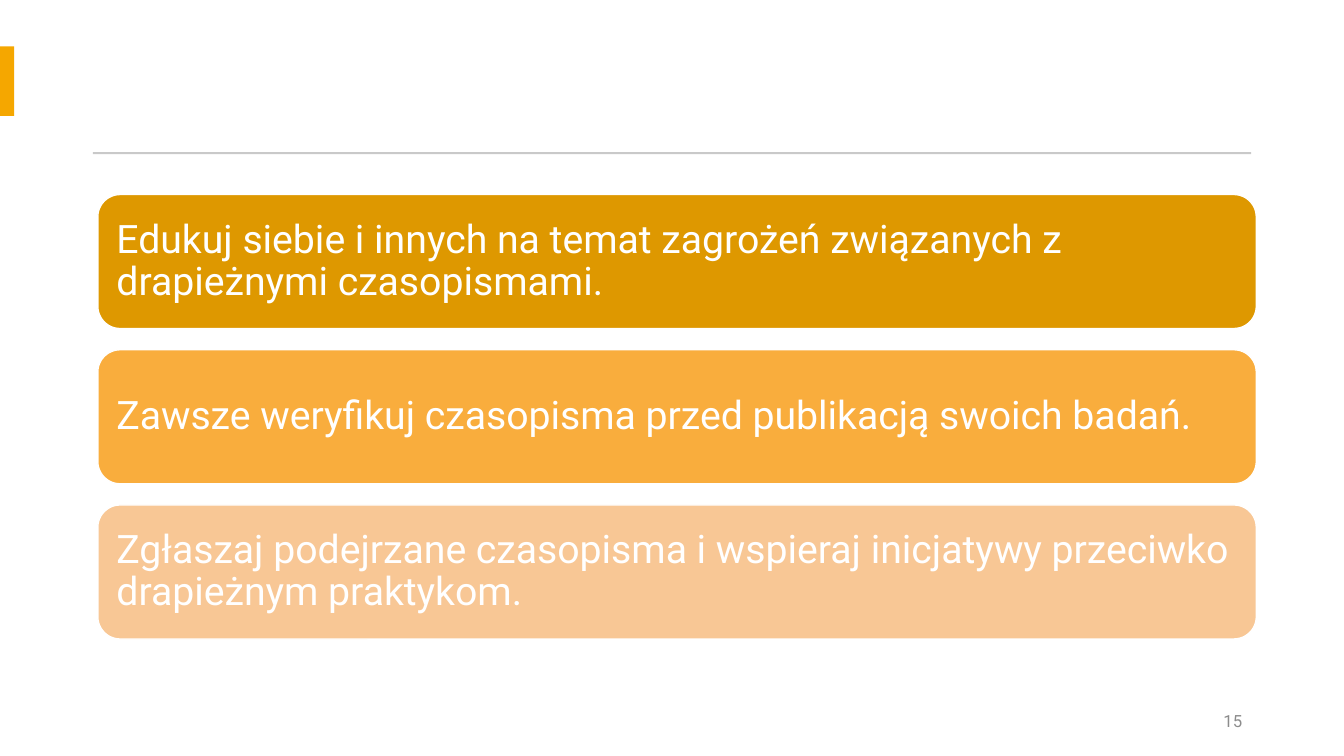
"""Build a slide with three recommendations about predatory journals."""
import dataclasses

import pptx
import pptx.dml.color
import pptx.enum.shapes
import pptx.enum.text
import pptx.util

PX = 9144
FONT = "Roboto"
WHITE = "FFFFFF"
Shape = pptx.enum.shapes.MSO_SHAPE
Align = pptx.enum.text.PP_ALIGN


@dataclasses.dataclass(frozen=True)
class Box:
    """Position and size in px, 100 to the inch."""
    left: int
    top: int
    width: int
    height: int

    def emu(self) -> list[int]:
        """Return the four lengths in EMU."""
        return [length * PX for length in dataclasses.astuple(self)]


@dataclasses.dataclass(frozen=True)
class Advice:
    """One recommendation and the fill of its card."""
    text: str
    fill: str


ACCENT_BAR = Box(0, 46, 14, 69)
TITLE_RULE = Box(92, 151, 1149, 2)
FIRST_CARD = Box(97, 193, 1149, 133)
CARD_PITCH = 154
PAGE_NUMBER = Box(942, 695, 300, 40)
ADVICE = [
    Advice("Edukuj siebie i innych na temat zagrożeń związanych z drapieżnymi czasopismami.", "DE9800"),
    Advice("Zawsze weryfikuj czasopisma przed publikacją swoich badań.", "F9AD3D"),
    Advice("Zgłaszaj podejrzane czasopisma i wspieraj inicjatywy przeciwko drapieżnym praktykom.", "F8C795"),
]


def color(value: str) -> pptx.dml.color.RGBColor:
    """Turn a hex string into a colour."""
    return pptx.dml.color.RGBColor.from_string(value)


def add_block(page, kind, box: Box, fill: str, line: str | None = None):
    """Add a filled shape, outlined only if a line colour is given."""
    block = page.shapes.add_shape(kind, *box.emu())
    block.shadow.inherit = False
    block.fill.solid()
    block.fill.fore_color.rgb = color(fill)
    if line:
        block.line.color.rgb = color(line)
        block.line.width = pptx.util.Pt(1)
    else:
        block.line.fill.background()
    return block


def write(shape, text: str, *, size: int, fill: str, align=Align.LEFT,
          spacing: float = 1.0, inset: int | None = None) -> None:
    """Write one vertically centred paragraph into a shape."""
    frame = shape.text_frame
    frame.word_wrap = True
    frame.vertical_anchor = pptx.enum.text.MSO_ANCHOR.MIDDLE
    if inset is not None:
        frame.margin_left = frame.margin_right = inset * PX
        frame.margin_top = frame.margin_bottom = inset * PX
    para = frame.paragraphs[0]
    para.alignment = align
    para.line_spacing = spacing
    span = para.add_run()
    span.text = text
    span.font.name = FONT
    span.font.size = pptx.util.Pt(size)
    span.font.color.rgb = color(fill)


def add_card(page, index: int, advice: Advice) -> None:
    """Add the card of one recommendation at its place in the stack."""
    box = dataclasses.replace(FIRST_CARD, top=FIRST_CARD.top + index * CARD_PITCH)
    card = add_block(page, Shape.ROUNDED_RECTANGLE, box, advice.fill, WHITE)
    write(card, advice.text, size=28, fill=WHITE, spacing=0.9, inset=12)


def main() -> None:
    """Build and save the deck."""
    deck = pptx.Presentation()
    deck.slide_width, deck.slide_height = 1333 * PX, 750 * PX
    page = deck.slides.add_slide(deck.slide_layouts[6])
    add_block(page, Shape.RECTANGLE, ACCENT_BAR, "F5A700")
    add_block(page, Shape.RECTANGLE, TITLE_RULE, "C9C9C9")
    for index, advice in enumerate(ADVICE):
        add_card(page, index, advice)
    number = page.shapes.add_textbox(*PAGE_NUMBER.emu())
    write(number, "15", size=12, fill="8C8C8C", align=Align.RIGHT)
    deck.save("out.pptx")


if __name__ == "__main__":
    main()
